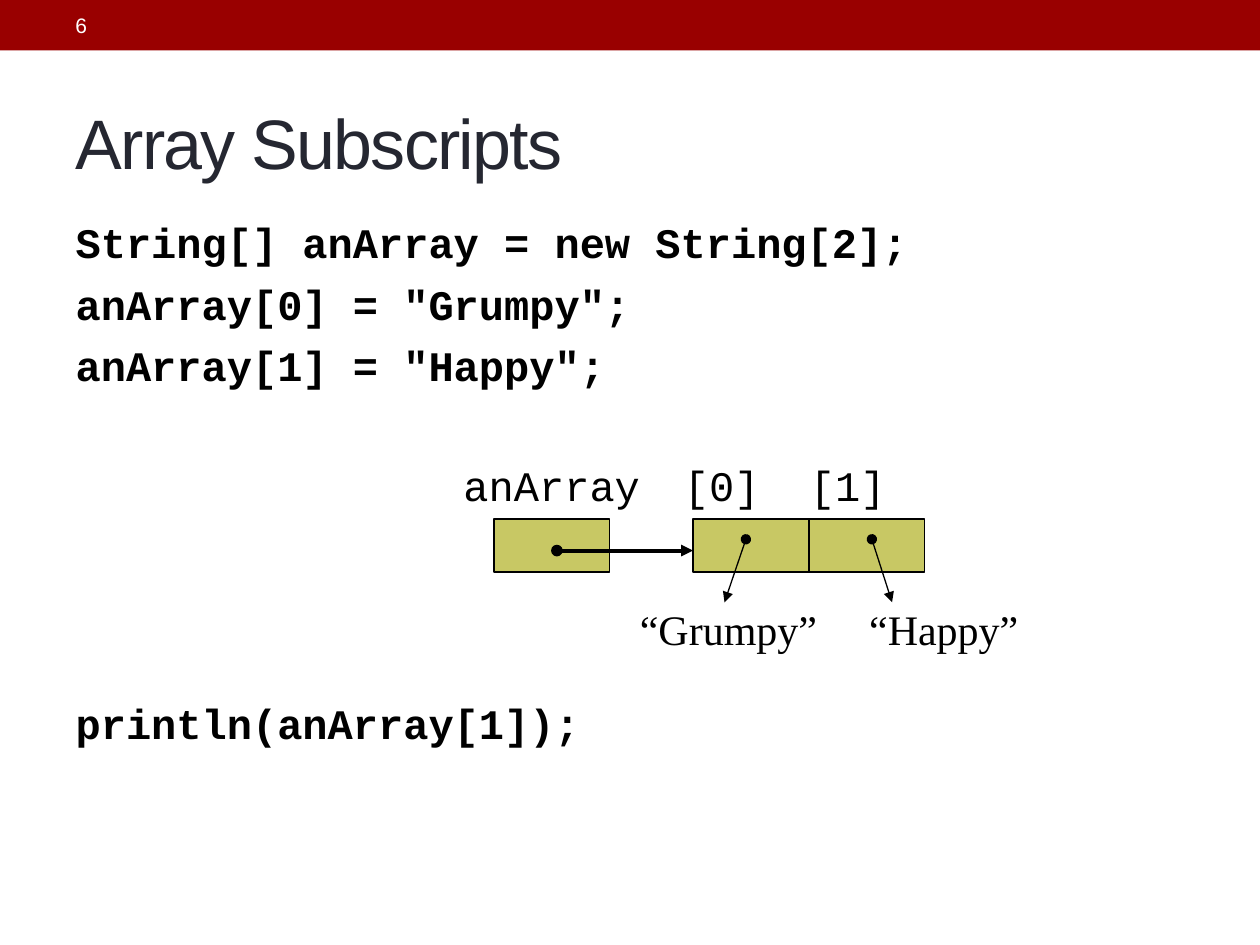
from lxml.etree import SubElement
from pptx import Presentation
from pptx.dml.color import RGBColor
from pptx.enum.shapes import MSO_CONNECTOR, MSO_SHAPE
from pptx.enum.text import MSO_ANCHOR, MSO_AUTO_SIZE, PP_ALIGN
from pptx.oxml.ns import qn
from pptx.util import Inches, Pt

RED = RGBColor(0x99, 0x00, 0x00)
WHITE = RGBColor(0xFF, 0xFF, 0xFF)
BLACK = RGBColor(0x00, 0x00, 0x00)
SLATE = RGBColor(0x25, 0x27, 0x31)
OLIVE = RGBColor(0xC8, 0xC8, 0x64)
CODE_FONT = "Courier New"
CELL_WIDTH, CELL_HEIGHT, CELL_TOP = 0.92, 0.42, 4.12
ARRAY_LEFT = 5.5
LABEL_TOP, VALUE_TOP = 3.6, 4.74


def set_font(paragraph, name, size, color, bold=False):
    font = paragraph.font
    font.name, font.size, font.bold = name, Pt(size), bold
    font.color.rgb = color


def place(shape, left, top, width, height):
    shape.left, shape.top = Inches(left), Inches(top)
    shape.width, shape.height = Inches(width), Inches(height)


def add_rectangle(slide, left, top, width, height, fill, outline=None):
    rectangle = slide.shapes.add_shape(
        MSO_SHAPE.RECTANGLE, Inches(left), Inches(top), Inches(width), Inches(height))
    rectangle.shadow.inherit = False
    rectangle.fill.solid()
    rectangle.fill.fore_color.rgb = fill
    if outline is None:
        rectangle.line.fill.background()
    else:
        rectangle.line.color.rgb = outline
        rectangle.line.width = Pt(0.75)


def add_label(slide, text, left, top, width, height, font, size=24, color=BLACK):
    label = slide.shapes.add_textbox(
        Inches(left), Inches(top), Inches(width), Inches(height))
    frame = label.text_frame
    frame.word_wrap = True
    frame.vertical_anchor = MSO_ANCHOR.MIDDLE if size < 24 else MSO_ANCHOR.TOP
    frame.text = text
    set_font(frame.paragraphs[0], font, size, color)


def add_reference(slide, start, end, width):
    reference = slide.shapes.add_connector(
        MSO_CONNECTOR.STRAIGHT, *map(Inches, start + end))
    reference.line.color.rgb = BLACK
    reference.line.width = Pt(width)
    line = reference.line._get_or_add_ln()
    SubElement(line, qn("a:headEnd"), type="oval")
    SubElement(line, qn("a:tailEnd"), type="triangle")
    SubElement(reference._element.spPr, qn("a:effectLst"))


def fill_title(title, text):
    place(title, 0.5, 0.58, 9, 1.08)
    frame = title.text_frame
    frame.text = text
    frame.vertical_anchor = MSO_ANCHOR.MIDDLE
    frame.auto_size = MSO_AUTO_SIZE.NONE
    heading = frame.paragraphs[0]
    heading.alignment = PP_ALIGN.LEFT
    set_font(heading, "Arial", 40, SLATE)
    heading.runs[0].font._element.set("spc", "-100")


def fill_code(body, statements):
    place(body, 0.5, 1.67, 9.08, 4.5)
    frame = body.text_frame
    frame.auto_size = MSO_AUTO_SIZE.NONE
    frame.text = "\n".join(text for text, _ in statements)
    for statement, (_, gap) in zip(frame.paragraphs, statements):
        properties = statement._p.get_or_add_pPr()
        properties.set("marL", "0")
        properties.set("indent", "0")
        statement.space_before = Pt(gap)
        SubElement(properties, qn("a:buNone"))
        set_font(statement, CODE_FONT, 24, BLACK, bold=True)


def draw_array(slide):
    add_label(slide, "anArray", 3.58, LABEL_TOP, 1.92, 0.5, CODE_FONT)
    add_rectangle(slide, 3.92, CELL_TOP, CELL_WIDTH, CELL_HEIGHT, OLIVE, BLACK)
    elements = [("“Grumpy”", 4.98, 5.92, 5.75), ("“Happy”", 6.8, 6.92, 7.08)]
    for index, (value, value_left, start, end) in enumerate(elements):
        add_rectangle(slide, ARRAY_LEFT + index * CELL_WIDTH, CELL_TOP,
                      CELL_WIDTH, CELL_HEIGHT, OLIVE, BLACK)
        add_label(slide, f"[{index}]", 5.33 + index, LABEL_TOP, 1, 0.5, CODE_FONT)
        add_label(slide, value, value_left, VALUE_TOP, 1.7, 0.5, "Times New Roman")
        add_reference(slide, (start, 4.28), (end, 4.78), 0.75)
    add_reference(slide, (4.42, 4.37), (ARRAY_LEFT, 4.37), 2.25)


def main():
    presentation = Presentation()
    presentation.slide_width, presentation.slide_height = Inches(10), Inches(7.5)
    slide = presentation.slides.add_slide(presentation.slide_layouts[1])
    add_rectangle(slide, 0, 0, 10, 0.4, RED)
    add_label(slide, "6", 0.5, 0.02, 3.17, 0.36, "Arial", 12, WHITE)
    fill_title(slide.shapes.title, "Array Subscripts")
    fill_code(slide.placeholders[1], [
        ("String[] anArray = new String[2];", 6.2),
        ('anArray[0] = "Grumpy";', 6.2),
        ('anArray[1] = "Happy";', 6.2),
        ("println(anArray[1]);", 175.7),
    ])
    draw_array(slide)
    presentation.save("out.pptx")


if __name__ == "__main__":
    main()
